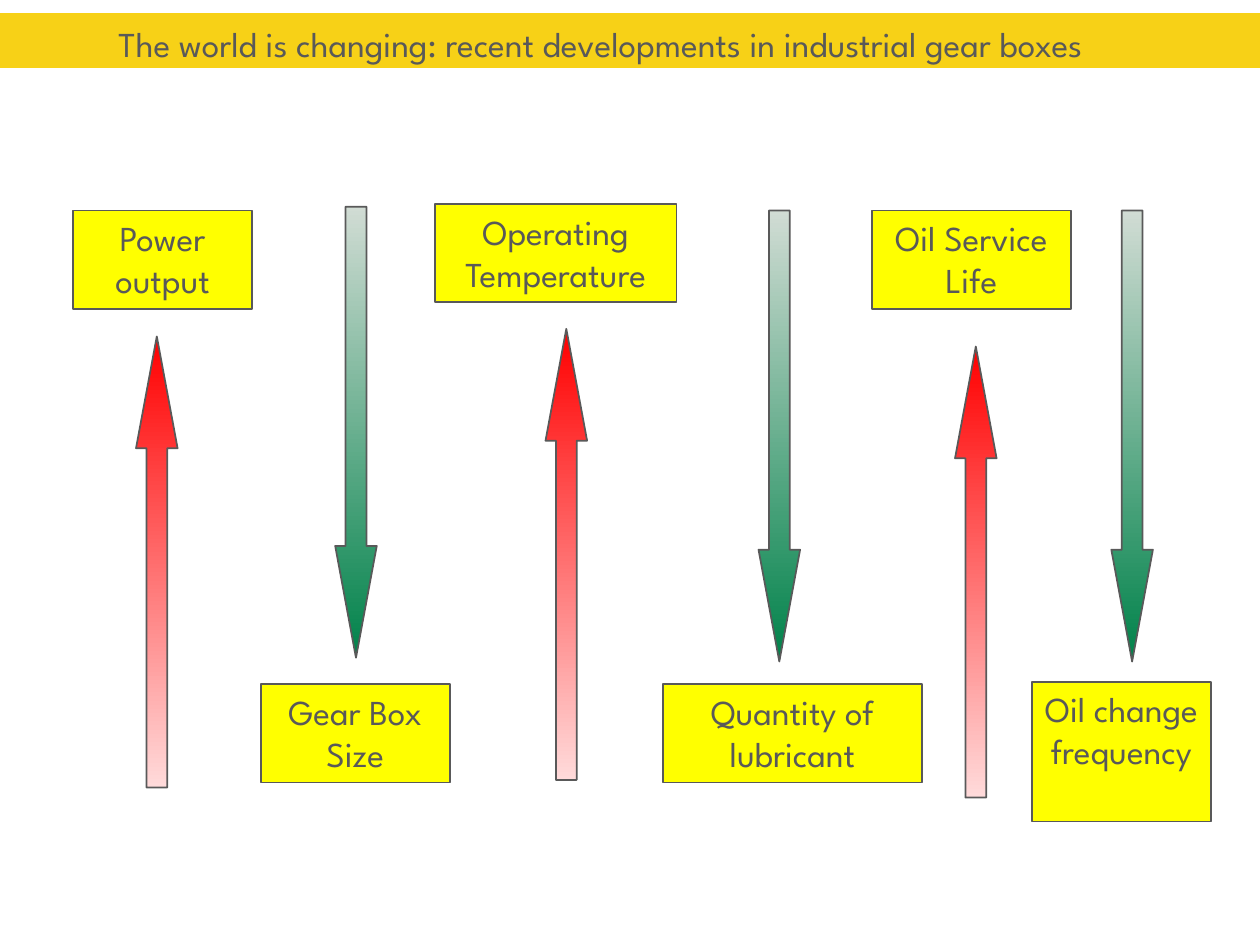
from dataclasses import dataclass

from pptx import Presentation
from pptx.dml.color import RGBColor
from pptx.enum.shapes import MSO_SHAPE as Preset
from pptx.enum.text import MSO_ANCHOR as Anchor, PP_ALIGN as Align
from pptx.oxml.ns import qn
from pptx.shapes.autoshape import Shape
from pptx.slide import Slide
from pptx.util import Emu, Pt

PX = 9144
FONT = "League Spartan"
GOLD = RGBColor(0xF7, 0xD1, 0x17)
YELLOW = RGBColor(0xFF, 0xFF, 0x00)
GREY = RGBColor(0x59, 0x59, 0x59)
RED = RGBColor(0xFF, 0x00, 0x00)
PINK = RGBColor(0xFF, 0xDA, 0xDA)
PALE_GREEN = RGBColor(0xD1, 0xDC, 0xD4)
GREEN = RGBColor(0x00, 0x82, 0x4A)

ARROW_WIDTH, ARROW_HEIGHT = 33, 358


@dataclass(frozen=True)
class Label:
    text: str
    left: int
    top: int
    width: int
    height: int = 78


@dataclass(frozen=True)
class Arrow:
    left: int
    top: int
    rising: bool


LABELS = [
    Label("Power output", 58, 167, 142),
    Label("Gear Box Size", 207, 543, 150),
    Label("Operating Temperature", 345, 162, 192),
    Label("Quantity of lubricant", 526, 543, 206),
    Label("Oil Service Life", 692, 167, 158),
    Label("Oil change frequency", 819, 541, 142, 111),
]
ARROWS = [
    Arrow(108, 267, True),
    Arrow(266, 164, False),
    Arrow(602, 167, False),
    Arrow(882, 167, False),
    Arrow(433, 261, True),
    Arrow(758, 275, True),
]


def px(length: int) -> Emu:
    return Emu(length * PX)


def add_outlined(slide: Slide, preset: Preset, left: int, top: int, width: int,
                 height: int, line: RGBColor = GREY, weight: float = 1) -> Shape:
    shape = slide.shapes.add_shape(preset, px(left), px(top), px(width), px(height))
    shape.shadow.inherit = False
    shape.line.color.rgb = line
    shape.line.width = Pt(weight)
    return shape


def write(shape: Shape, text: str, align: Align = Align.CENTER,
          insets: tuple[int, int, int, int] = (10, 5, 10, 5)) -> None:
    frame = shape.text_frame
    frame.word_wrap = True
    frame.vertical_anchor = Anchor.TOP
    frame.margin_left, frame.margin_top, frame.margin_right, frame.margin_bottom = map(px, insets)
    paragraph = frame.paragraphs[0]
    paragraph.alignment = align
    run = paragraph.add_run()
    run.text = text
    run.font.name = FONT
    run.font.size = Pt(20)
    run.font.color.rgb = GREY


def add_title(slide: Slide, text: str) -> None:
    banner = add_outlined(slide, Preset.RECTANGLE, 0, 12, 1000, 40, line=GOLD, weight=2.9)
    banner.fill.solid()
    banner.fill.fore_color.rgb = GOLD
    write(banner, text, align=Align.LEFT, insets=(94, 6, 0, 0))


def add_label(slide: Slide, label: Label) -> None:
    box = add_outlined(slide, Preset.RECTANGLE, label.left, label.top, label.width, label.height)
    box.fill.solid()
    box.fill.fore_color.rgb = YELLOW
    write(box, label.text)


def add_arrow(slide: Slide, arrow: Arrow) -> None:
    shape = add_outlined(slide, Preset.UP_ARROW, arrow.left, arrow.top, ARROW_WIDTH, ARROW_HEIGHT)
    shape.adjustments[0] = 0.5
    shape.adjustments[1] = 2.69
    shape.rotation = 0 if arrow.rising else 180
    shape.fill.gradient()
    shape.fill.gradient_angle = 270
    colors = (RED, PINK) if arrow.rising else (PALE_GREEN, GREEN)
    for stop, color in zip(shape.fill.gradient_stops, colors):
        stop.color.rgb = color
    shape.element.spPr.find(qn("a:gradFill")).set("rotWithShape", "0")


def main() -> None:
    presentation = Presentation()
    presentation.slide_width, presentation.slide_height = px(1000), px(750)
    slide = presentation.slides.add_slide(presentation.slide_layouts[6])
    add_title(slide, "The world is changing: recent developments in industrial gear boxes")
    for label in LABELS:
        add_label(slide, label)
    for arrow in ARROWS:
        add_arrow(slide, arrow)
    presentation.save("out.pptx")


if __name__ == "__main__":
    main()
